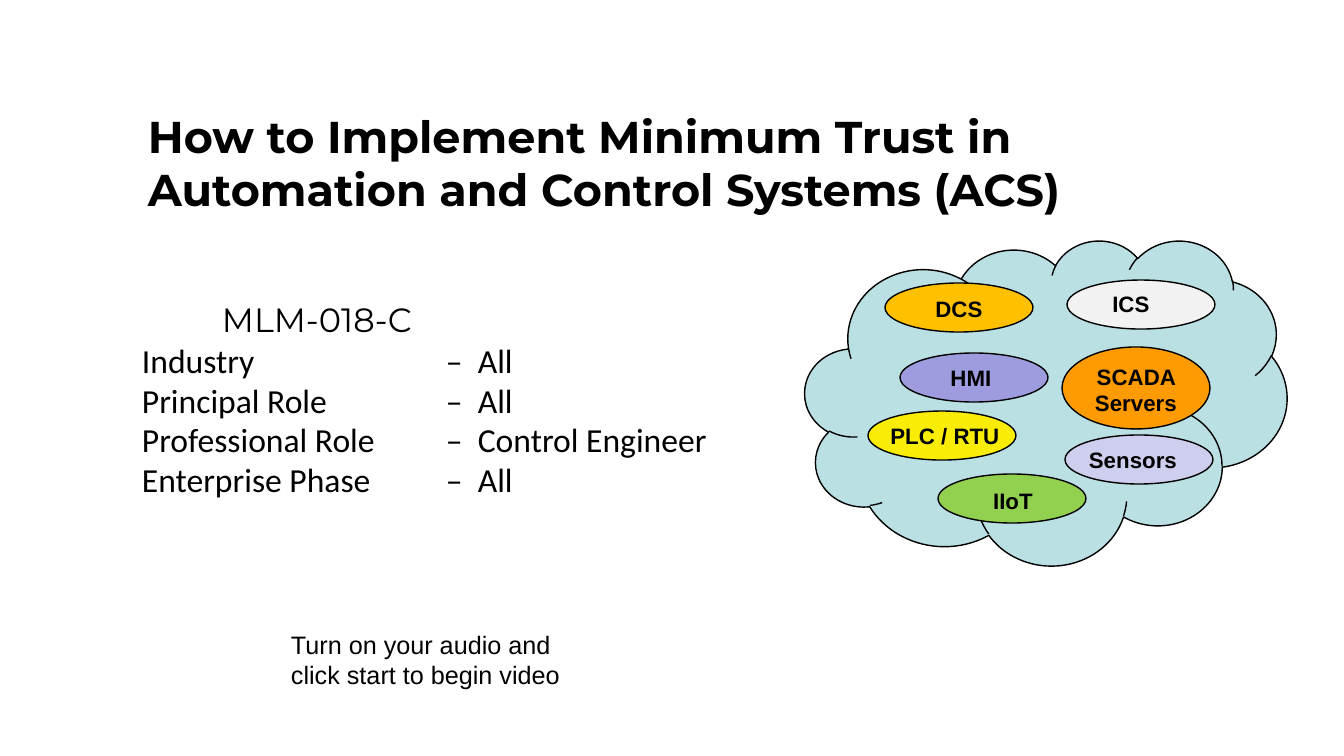
from dataclasses import dataclass

from pptx import Presentation
from pptx import util as u
from pptx.dml.color import RGBColor
from pptx.enum import shapes, text
from pptx.oxml import xmlchemy  # noqa: F401
from lxml import etree

EMU_PER_PX = 914400 / 100.8
DRAWING_NS = "{http://schemas.openxmlformats.org/drawingml/2006/main}"

COLOURS = {
    "ink": "000000",
    "cloud": "BBE0E3",
    "yellow": "F9ED07",
    "lavender": "CECEEF",
    "orange": "FE9B03",
    "violet": "9C9CDF",
    "green": "92D050",
    "amber": "FFC000",
    "grey": "F2F2F2",
}

DEVICE_WIDTH = 148
LABEL_WIDTH = 162


@dataclass(frozen=True)
class Device:
    name: str
    colour: str
    left: int
    top: int
    label_centre: int
    label_top: int
    height: int = 49


DEVICES = [
    Device("PLC / RTU", "yellow", 868, 411, 945, 417),
    Device("Sensors", "lavender", 1065, 435, 1133, 441),
    Device("SCADA Servers", "orange", 1062, 347, 1136, 358, height=82),
    Device("HMI", "violet", 900, 353, 971, 359),
    Device("IIoT", "green", 938, 474, 1013, 482),
    Device("DCS", "amber", 885, 283, 959, 290),
    Device("ICS", "grey", 1067, 280, 1131, 285),
]

PROFILE = [
    ("Industry", "All"),
    ("Principal Role", "All"),
    ("Professional Role", "Control Engineer"),
    ("Enterprise Phase", "All"),
]


def px(length: float) -> u.Emu:
    return u.Emu(round(length * EMU_PER_PX))


def rgb(colour: str) -> RGBColor:
    return RGBColor.from_string(COLOURS[colour])


def add_outlined_shape(parent, kind, left: int, top: int, width: int, height: int, colour: str):
    shape = parent.add_shape(kind, px(left), px(top), px(width), px(height))
    shape.shadow.inherit = False
    shape.fill.solid()
    shape.fill.fore_color.rgb = rgb(colour)
    shape.line.color.rgb = rgb("ink")
    shape.line.width = u.Pt(1)
    return shape


def add_text(parent, lines: list[str], left: int, top: int, width: int, height: int, *,
             size: float, font: str = "Arial", bold: bool = False,
             align=text.PP_ALIGN.LEFT, inset: tuple[int, int] = (0, 0)):
    """Add a wrapped text box with one paragraph per line; inset is (sides, top and bottom)."""
    box = parent.add_textbox(px(left), px(top), px(width), px(height))
    frame = box.text_frame
    frame.word_wrap = True
    frame.vertical_anchor = text.MSO_ANCHOR.TOP
    frame.margin_left = frame.margin_right = px(inset[0])
    frame.margin_top = frame.margin_bottom = px(inset[1])
    for index, line in enumerate(lines):
        paragraph = frame.paragraphs[0] if index == 0 else frame.add_paragraph()
        paragraph.alignment = align
        run = paragraph.add_run()
        run.text = line
        run.font.size = u.Pt(size)
        run.font.name = font
        run.font.bold = bold
        run.font.color.rgb = rgb("ink")
    return box


def add_tab_stop(paragraph, position: int) -> None:
    properties = paragraph._p.get_or_add_pPr()
    tabs = etree.SubElement(properties, DRAWING_NS + "tabLst")
    etree.SubElement(tabs, DRAWING_NS + "tab", pos=str(px(position)), algn="l")


def add_system_cloud(slide) -> None:
    group = slide.shapes.add_group_shape().shapes
    add_outlined_shape(group, shapes.MSO_SHAPE.CLOUD, 805, 240, 482, 325, "cloud")
    for device in DEVICES:
        add_outlined_shape(group, shapes.MSO_SHAPE.OVAL, device.left, device.top,
                           DEVICE_WIDTH, device.height, device.colour)
        add_text(group, [device.name], device.label_centre - LABEL_WIDTH // 2,
                 device.label_top, LABEL_WIDTH, 37, size=15.9, bold=True,
                 align=text.PP_ALIGN.CENTER, inset=(10, 5))


def add_profile(slide) -> None:
    """Add the course code and the tabbed list of its audience."""
    code = add_text(slide.shapes, ["MLM-018-C"], 142, 299, 606, 41, size=24, font="Montserrat")
    code.text_frame.margin_left = px(80)
    rows = [f"{field}\t–  {value}" for field, value in PROFILE]
    table = add_text(slide.shapes, rows, 142, 342, 606, 162, size=24, font="Calibri")
    for paragraph in table.text_frame.paragraphs:
        paragraph.line_spacing = 0.98
        add_tab_stop(paragraph, 304)


def main() -> None:
    presentation = Presentation()
    presentation.slide_width = px(1344)
    presentation.slide_height = px(756)
    slide = presentation.slides.add_slide(presentation.slide_layouts[6])
    add_system_cloud(slide)
    add_text(slide.shapes,
             ["How to Implement Minimum Trust in Automation and Control Systems (ACS)"],
             137, 103, 1001, 151, size=31.8, font="Montserrat", bold=True, inset=(11, 6))
    add_profile(slide)
    add_text(slide.shapes, ["Turn on your audio and click start to begin video"],
             291, 629, 304, 61, size=18)
    presentation.save("out.pptx")


if __name__ == "__main__":
    main()
